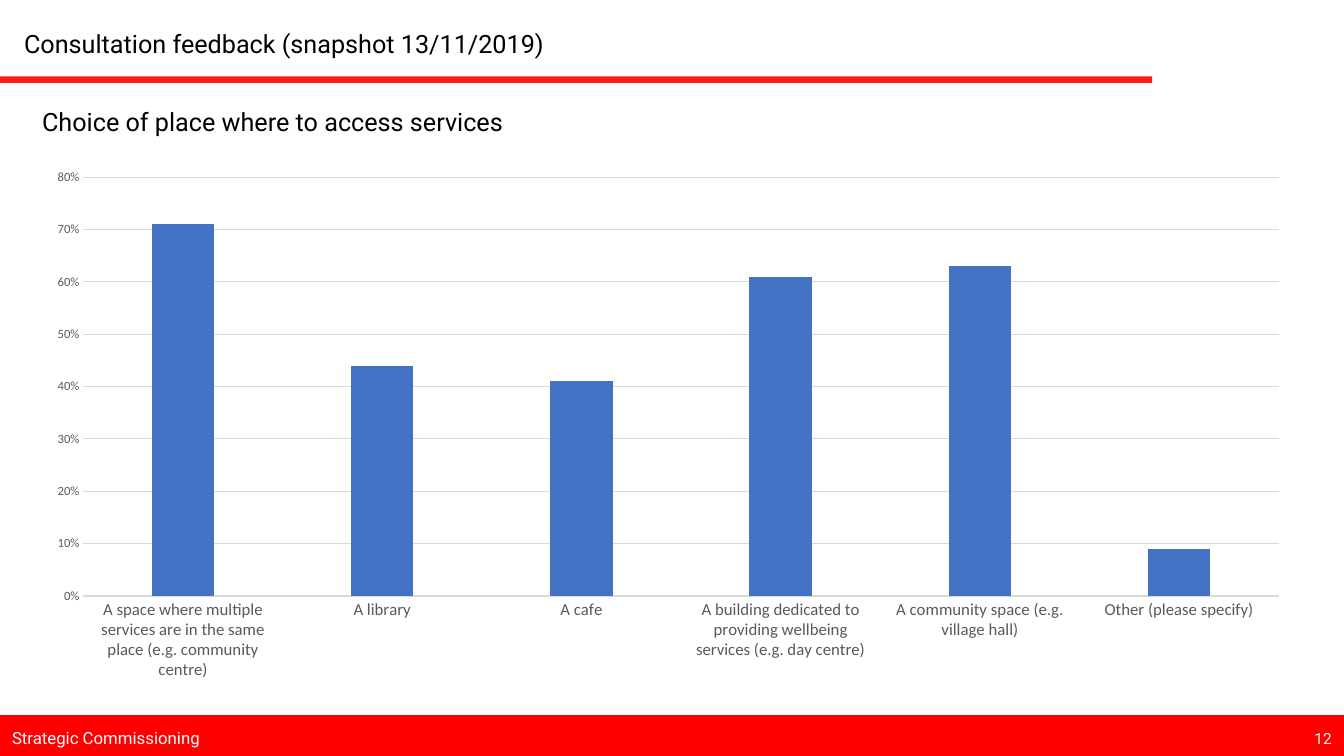
"""Build the consultation feedback slide with a column chart of preferred places."""
from dataclasses import dataclass

from lxml import etree
from pptx import Presentation
from pptx import util as u
from pptx.chart.data import CategoryChartData
from pptx.dml.color import RGBColor
from pptx.enum import chart as charts, shapes, text
from pptx.oxml.ns import qn

Pt = u.Pt

TITLE = "Consultation feedback (snapshot 13/11/2019)"
SUBTITLE = "Choice of place where to access services"
FOOTER = "Strategic Commissioning"
PAGE_NUMBER = "12"
PLACES = [
    ("A space where multiple services are in the same place (e.g. community centre)", 0.71),
    ("A library", 0.44),
    ("A cafe", 0.41),
    ("A building dedicated to providing wellbeing services (e.g. day centre)", 0.61),
    ("A community space (e.g. village hall)", 0.63),
    ("Other (please specify)", 0.09),
]


@dataclass(frozen=True)
class Theme:
    """Colours, fonts and type sizes of the slide."""
    red: str = "FF0000"
    white: str = "FFFFFF"
    black: str = "000000"
    bar: str = "4472C4"
    label: str = "595959"
    grid: str = "D9D9D9"
    font: str = "Roboto"
    chart_font: str = "Calibri"
    heading: float = 18
    footer: float = 12
    page: float = 11
    category: float = 12
    value: float = 9
    chart: float = 10


THEME = Theme()
WIDTH, HEIGHT = 960, 540
FOOTER_TOP = 511.5
RULE_Y, RULE_END = 56.9, 823
CONTENT_LEFT = 23


def style_font(font, name, size, color):
    """Set the typeface, size and colour of a font."""
    font.name = name
    font.size = Pt(size)
    font.color.rgb = RGBColor.from_string(color)


def style_line(line, color, width):
    """Give a line a solid colour and a width."""
    line.color.rgb = RGBColor.from_string(color)
    line.width = Pt(width)


def write(shape, words, size, color, align=text.PP_ALIGN.LEFT, anchor=text.MSO_ANCHOR.TOP):
    """Write one run of words into a shape."""
    frame = shape.text_frame
    frame.word_wrap = True
    frame.auto_size = text.MSO_AUTO_SIZE.NONE
    frame.vertical_anchor = anchor
    frame.margin_left = frame.margin_right = Pt(7.2)
    frame.margin_top = frame.margin_bottom = Pt(3.6)
    paragraph = frame.paragraphs[0]
    paragraph.alignment = align
    run = paragraph.add_run()
    run.text = words
    style_font(run.font, THEME.font, size, color)


def add_label(slide, box, *args, **kwargs):
    """Add a text box at the given place."""
    write(slide.shapes.add_textbox(*map(Pt, box)), *args, **kwargs)


def add_frame(slide):
    """Draw the footer band and the rule under the title."""
    band = slide.shapes.add_shape(
        shapes.MSO_SHAPE.RECTANGLE, 0, Pt(FOOTER_TOP), Pt(WIDTH), Pt(HEIGHT - FOOTER_TOP))
    band.shadow.inherit = False
    band.fill.solid()
    band.fill.fore_color.rgb = RGBColor.from_string(THEME.red)
    style_line(band.line, THEME.red, 1)

    rule = slide.shapes.add_connector(
        shapes.MSO_CONNECTOR.STRAIGHT, 0, Pt(RULE_Y), Pt(RULE_END), Pt(RULE_Y))
    style_line(rule.line, THEME.red, 4.5)
    properties = rule._element.spPr
    color = properties.find(".//" + qn("a:srgbClr"))
    etree.SubElement(color, qn("a:alpha")).set("val", "90000")
    etree.SubElement(properties, qn("a:effectLst"))


def add_places_chart(slide):
    """Add the column chart of places."""
    data = CategoryChartData(number_format="0%")
    data.categories = [place for place, share in PLACES]
    data.add_series("Series 1", [share for place, share in PLACES])
    chart = slide.shapes.add_chart(
        charts.XL_CHART_TYPE.COLUMN_CLUSTERED,
        Pt(CONTENT_LEFT), Pt(113.8), Pt(908.6), Pt(379.4), data).chart
    chart.has_legend = False
    chart.has_title = False
    style_font(chart.font, THEME.chart_font, THEME.chart, THEME.black)

    plot = chart.plots[0]
    plot.gap_width, plot.overlap = 219, -27
    plot.vary_by_categories = False
    fill = plot.series[0].format.fill
    fill.solid()
    fill.fore_color.rgb = RGBColor.from_string(THEME.bar)

    categories, values = chart.category_axis, chart.value_axis
    for axis, size in ((categories, THEME.category), (values, THEME.value)):
        axis.major_tick_mark = axis.minor_tick_mark = charts.XL_TICK_MARK.NONE
        style_font(axis.tick_labels.font, THEME.chart_font, size, THEME.label)
    style_line(categories.format.line, THEME.grid, 0.75)
    style_line(values.major_gridlines.format.line, THEME.grid, 0.75)
    values.format.line.fill.background()
    values.minimum_scale, values.maximum_scale, values.major_unit = 0, 0.8, 0.1
    values.tick_labels.number_format = "0%"
    values.tick_labels.number_format_is_linked = False


def main():
    """Assemble and save the slide."""
    presentation = Presentation()
    presentation.slide_width, presentation.slide_height = Pt(WIDTH), Pt(HEIGHT)
    slide = presentation.slides.add_slide(presentation.slide_layouts.get_by_name("Title Only"))
    add_frame(slide)
    title = slide.shapes.title
    title.left, title.top, title.width, title.height = map(Pt, (10, 16.6, 392.4, 29))
    write(title, TITLE, THEME.heading, THEME.black)
    add_label(slide, (CONTENT_LEFT, 72.7, 798.5, 29), SUBTITLE, THEME.heading, THEME.black)
    add_label(slide, (1.5, 513, 168, 28.5), FOOTER, THEME.footer, THEME.white,
              anchor=text.MSO_ANCHOR.MIDDLE)
    add_label(slide, (922, 517, 36.4, 20.6), PAGE_NUMBER, THEME.page, THEME.white,
              align=text.PP_ALIGN.RIGHT)
    add_places_chart(slide)
    presentation.save("out.pptx")


if __name__ == "__main__":
    main()
